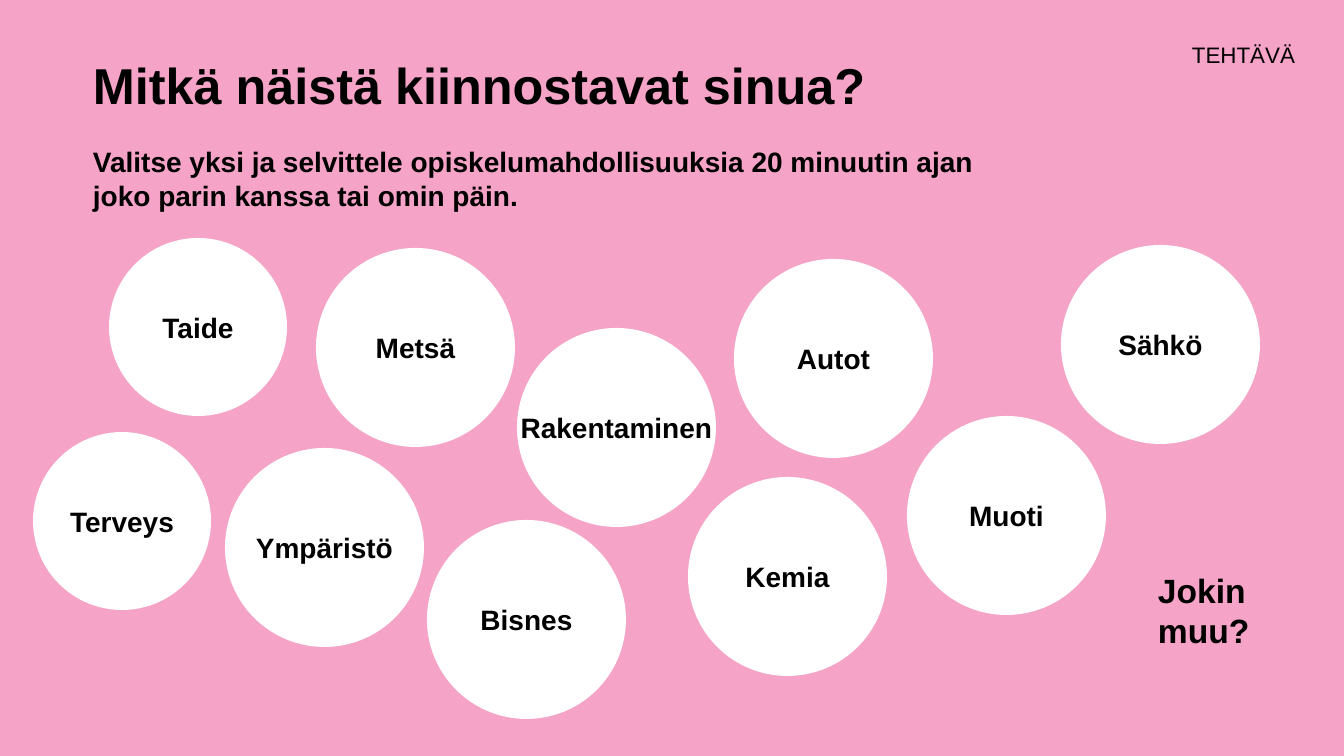
"""Build a slide asking pupils which of ten fields interest them."""
from pptx import Presentation
from pptx.dml.color import RGBColor
from pptx.enum.shapes import MSO_SHAPE
from pptx.enum.text import MSO_ANCHOR, MSO_AUTO_SIZE, PP_ALIGN
from pptx.util import Pt

PX = 12192000 / 1344
PINK, WHITE, BLACK = "F5A3C7", "FFFFFF", "000000"
SMALL, LARGE = 178, 199
FIELDS = [
    ("Taide", 109, 238, SMALL),
    ("Metsä", 316, 248, LARGE),
    ("Autot", 734, 259, LARGE),
    ("Sähkö", 1061, 245, LARGE),
    ("Muoti", 907, 416, LARGE),
    ("Rakentaminen", 517, 328, LARGE),
    ("Ympäristö", 225, 448, LARGE),
    ("Terveys", 33, 432, SMALL),
    ("Bisnes", 427, 520, LARGE),
    ("Kemia", 688, 477, LARGE),
]


def box(*lengths):
    return [round(n * PX) for n in lengths]


def write(sp, text, size, bold=True, align=PP_ALIGN.LEFT,
          anchor=MSO_ANCHOR.TOP, margins=(0, 0, 0, 0), wrap=True):
    tf = sp.text_frame
    tf.text = text
    tf.word_wrap = wrap
    tf.auto_size = MSO_AUTO_SIZE.NONE
    tf.vertical_anchor = anchor
    tf.margin_left, tf.margin_top, tf.margin_right, tf.margin_bottom = box(*margins)
    p = tf.paragraphs[0]
    p.alignment = align
    p.font.name = "Arial"
    p.font.size = Pt(size)
    p.font.bold = bold
    p.font.color.rgb = RGBColor.from_string(BLACK)


prs = Presentation()
prs.slide_width, prs.slide_height = box(1344, 756)
s = prs.slides.add_slide(prs.slide_layouts[5])
s.background.fill.solid()
s.background.fill.fore_color.rgb = RGBColor.from_string(PINK)

title = s.shapes.title
title.left, title.top, title.width, title.height = box(93, 0, 980, 169)
write(title, "Mitkä näistä kiinnostavat sinua?", 36, anchor=MSO_ANCHOR.MIDDLE)

tag = s.shapes.add_textbox(*box(1168, 36, 139, 37))
write(tag, "TEHTÄVÄ", 16, bold=False, align=PP_ALIGN.RIGHT,
      anchor=MSO_ANCHOR.MIDDLE, margins=(0, 0, 12, 0))

task = s.shapes.add_textbox(*box(93, 145, 926, 80))
write(task, "Valitse yksi ja selvittele opiskelumahdollisuuksia 20 minuutin ajan "
      "joko parin kanssa tai omin päin.", 20)

for name, left, top, size in FIELDS:
    circle = s.shapes.add_shape(MSO_SHAPE.FLOWCHART_CONNECTOR, *box(left, top, size, size))
    circle.shadow.inherit = False
    circle.fill.solid()
    circle.fill.fore_color.rgb = RGBColor.from_string(WHITE)
    circle.line.fill.background()
    write(circle, name, 20, align=PP_ALIGN.CENTER, anchor=MSO_ANCHOR.MIDDLE, wrap=False)

other = s.shapes.add_textbox(*box(1148, 565, 187, 92))
write(other, "Jokin muu?", 24, margins=(10, 5, 10, 5))
other.text_frame.auto_size = MSO_AUTO_SIZE.SHAPE_TO_FIT_TEXT

prs.save("out.pptx")
